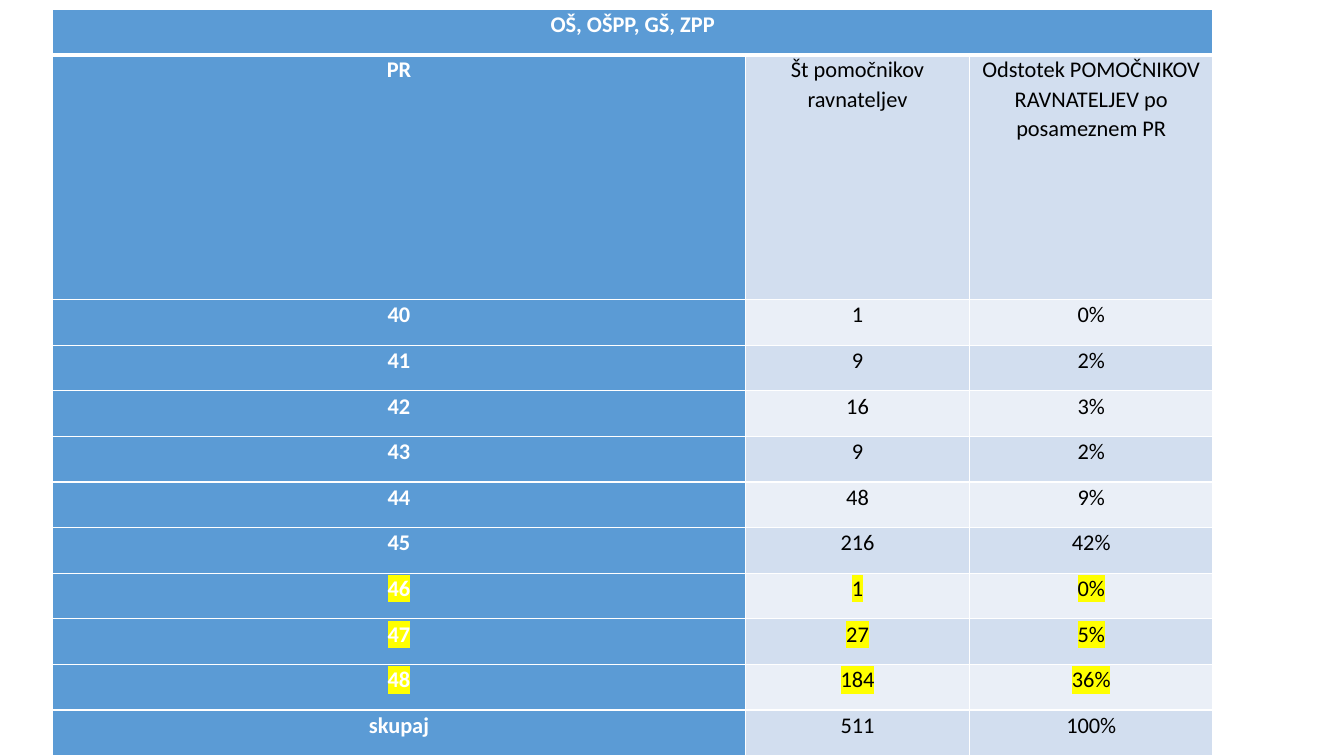
"""Build a slide with a table of assistant head teachers by salary grade."""
import lxml.etree
import pptx
import pptx.dml.color
import pptx.enum.text
import pptx.oxml.ns
import pptx.util

Cm = pptx.util.Cm
Pt = pptx.util.Pt
RGBColor = pptx.dml.color.RGBColor

TITLE = "OŠ, OŠPP, GŠ, ZPP"
ROWS = [
    ("PR", "Št pomočnikov ravnateljev", "Odstotek POMOČNIKOV RAVNATELJEV po posameznem PR"),
    ("40", "1", "0%"),
    ("41", "9", "2%"),
    ("42", "16", "3%"),
    ("43", "9", "2%"),
    ("44", "48", "9%"),
    ("45", "216", "42%"),
    ("46", "1", "0%"),
    ("47", "27", "5%"),
    ("48", "184", "36%"),
    ("skupaj", "511", "100%"),
]
HIGHLIGHTED_GRADES = {"46", "47", "48"}

BLUE = RGBColor(0x5B, 0x9B, 0xD5)
BANDS = (RGBColor(0xD2, 0xDE, 0xEF), RGBColor(0xEA, 0xEF, 0xF7))
WHITE = RGBColor(0xFF, 0xFF, 0xFF)
BLACK = RGBColor(0x00, 0x00, 0x00)
YELLOW = RGBColor(0xFF, 0xFF, 0x00)

LEFT, TOP = Cm(1.33), Cm(0.23)
COLUMN_WIDTHS = (Cm(17.45), Cm(5.66), Cm(6.12))
ROW_HEIGHT, LABEL_ROW_HEIGHT = Cm(1.15), Cm(6.17)
CELL_FORMAT = {
    "margin_left": Cm(0.18),
    "margin_right": Cm(0.18),
    "margin_top": 0,
    "margin_bottom": 0,
}
PARAGRAPH_FORMAT = {"alignment": pptx.enum.text.PP_ALIGN.CENTER, "line_spacing": 1.07}


def apply_format(target, values):
    for name, value in values.items():
        setattr(target, name, value)


def add_color(parent, color):
    lxml.etree.SubElement(parent, pptx.oxml.ns.qn("a:srgbClr"), val=str(color))


def draw_borders(cell, widths):
    properties = cell._tc.get_or_add_tcPr()
    for side, width in widths.items():
        line = lxml.etree.SubElement(properties, pptx.oxml.ns.qn("a:ln" + side), w=str(Pt(width)))
        add_color(lxml.etree.SubElement(line, pptx.oxml.ns.qn("a:solidFill")), WHITE)


def highlight(run):
    mark = lxml.etree.Element(pptx.oxml.ns.qn("a:highlight"))
    add_color(mark, YELLOW)
    run.font._element.find(pptx.oxml.ns.qn("a:solidFill")).addnext(mark)


def fill_cell(cell, text, fill, is_header, is_highlighted, borders):
    apply_format(cell, CELL_FORMAT)
    draw_borders(cell, borders)
    cell.fill.solid()
    cell.fill.fore_color.rgb = fill
    paragraph = cell.text_frame.paragraphs[0]
    apply_format(paragraph, PARAGRAPH_FORMAT)
    run = paragraph.add_run()
    run.text = text
    apply_format(run.font, {"name": "Calibri", "size": Pt(16), "bold": is_header})
    run.font.color.rgb = WHITE if is_header else BLACK
    if is_highlighted:
        highlight(run)


def main():
    presentation = pptx.Presentation()
    presentation.slide_width, presentation.slide_height = Cm(33.87), Cm(19.05)
    slide = presentation.slides.add_slide(presentation.slide_layouts[6])

    heights = [ROW_HEIGHT, LABEL_ROW_HEIGHT] + [ROW_HEIGHT] * (len(ROWS) - 1)
    table = slide.shapes.add_table(
        len(heights), len(COLUMN_WIDTHS), LEFT, TOP, sum(COLUMN_WIDTHS), sum(heights)
    ).table
    for column, width in zip(table.columns, COLUMN_WIDTHS):
        column.width = width
    for row, height in zip(table.rows, heights):
        row.height = height

    table.cell(0, 0).merge(table.cell(0, len(COLUMN_WIDTHS) - 1))
    fill_cell(table.cell(0, 0), TITLE, BLUE, True, False, {"L": 1, "R": 1, "T": 1, "B": 3})
    for row_index, values in enumerate(ROWS, start=1):
        borders = {"L": 1, "R": 1, "T": 3 if row_index == 1 else 1, "B": 1}
        band = BANDS[(row_index - 1) % 2]
        for column_index, text in enumerate(values):
            is_header = column_index == 0
            fill_cell(
                table.cell(row_index, column_index), text, BLUE if is_header else band,
                is_header, values[0] in HIGHLIGHTED_GRADES, borders,
            )

    presentation.save("out.pptx")


if __name__ == "__main__":
    main()
